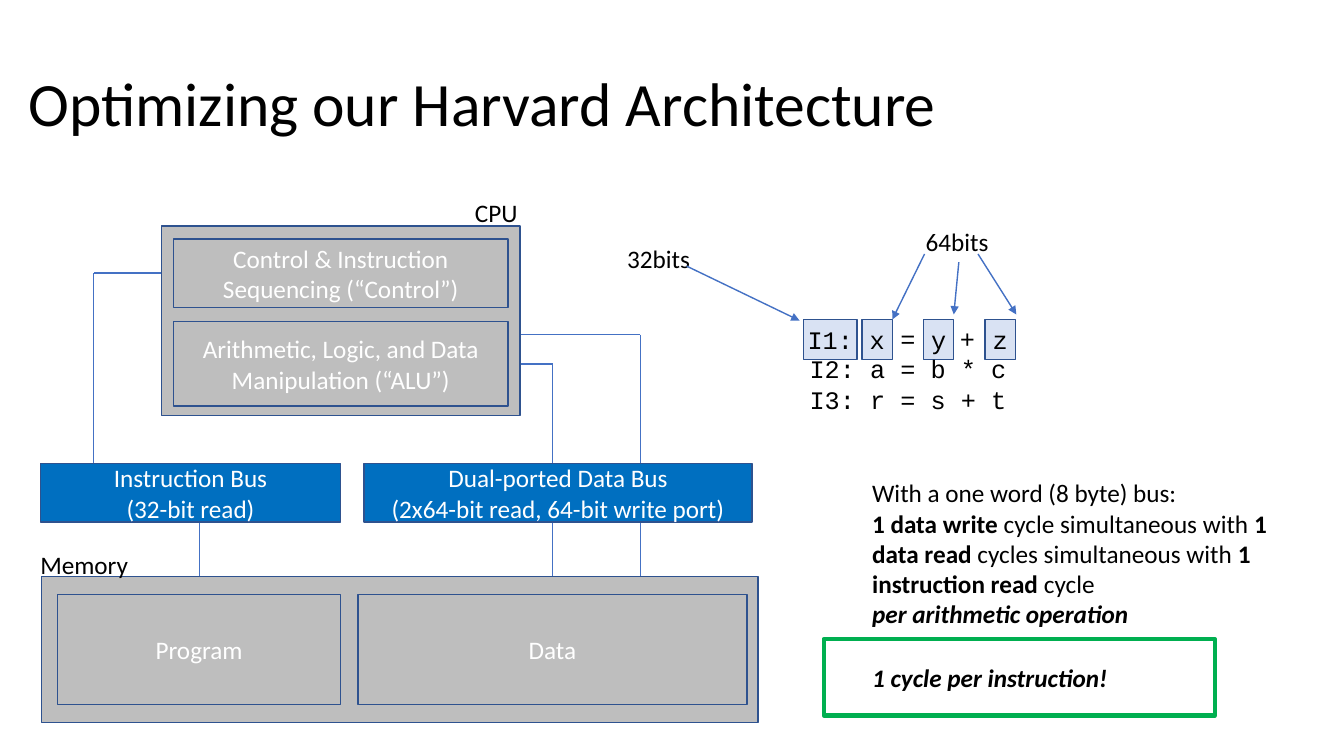
from lxml import etree
from pptx import Presentation
from pptx.dml.color import RGBColor
from pptx.enum.shapes import MSO_CONNECTOR, MSO_SHAPE
from pptx.enum.text import MSO_ANCHOR, PP_ALIGN
from pptx.oxml.ns import qn
from pptx.util import Inches, Pt

BLACK = RGBColor(0x00, 0x00, 0x00)
WHITE = RGBColor(0xFF, 0xFF, 0xFF)
GRAY = RGBColor(0xBE, 0xBE, 0xBE)
BUS_BLUE = RGBColor(0x00, 0x6F, 0xC0)
OUTLINE_BLUE = RGBColor(0x2E, 0x52, 0x8F)
WIRE_BLUE = RGBColor(0x44, 0x71, 0xC4)
GREEN = RGBColor(0x00, 0xAF, 0x50)
RECTANGLE = MSO_SHAPE.RECTANGLE
STRAIGHT = MSO_CONNECTOR.STRAIGHT
LEFT, CENTER = PP_ALIGN.LEFT, PP_ALIGN.CENTER
TOP, MIDDLE = MSO_ANCHOR.TOP, MSO_ANCHOR.MIDDLE

BASE_FONT = {"name": "Calibri", "size": Pt(18), "bold": False, "italic": False}
CODE_FONT = {"name": "Courier New"}
BOLD = {"bold": True}
BOLD_ITALIC = {"bold": True, "italic": True}


def write(shape, paragraphs, color=BLACK, align=LEFT, anchor=TOP, wrap=True,
          left_margin=0, **font):
    """Each paragraph is a string or a list of (text, format) spans."""
    frame = shape.text_frame
    settings = {"margin_left": Inches(left_margin), "margin_right": 0,
                "margin_top": 0, "margin_bottom": 0,
                "vertical_anchor": anchor, "word_wrap": wrap}
    for name, value in settings.items():
        setattr(frame, name, value)
    for index, content in enumerate(paragraphs):
        para = frame.add_paragraph() if index else frame.paragraphs[0]
        para.alignment = align
        spans = [(content, {})] if isinstance(content, str) else content
        for text, extra in spans:
            span = para.add_run()
            span.text = text
            span.font.color.rgb = color
            for name, value in {**BASE_FONT, **font, **extra}.items():
                setattr(span.font, name, value)


def add_box(slide, place, fill=None, line=OUTLINE_BLUE, width=1, opacity=100):
    box = slide.shapes.add_shape(RECTANGLE, *map(Inches, place))
    box.shadow.inherit = False
    box.line.color.rgb = line
    box.line.width = Pt(width)
    if fill is None:
        box.fill.background()
        return box
    box.fill.solid()
    box.fill.fore_color.rgb = fill
    if opacity < 100:
        color = box.fill._xPr.find(qn("a:solidFill"))[0]
        etree.SubElement(color, qn("a:alpha"), val=str(opacity * 1000))
    return box


def add_block(slide, place, lines, fill=GRAY):
    write(add_box(slide, place, fill), lines, WHITE, CENTER, MIDDLE)


def add_label(slide, place, paragraphs, wrap=False, **font):
    write(slide.shapes.add_textbox(*map(Inches, place)), paragraphs, wrap=wrap, **font)


def add_line(slide, start, end, arrow=False):
    line = slide.shapes.add_connector(STRAIGHT, *map(Inches, start + end))
    line.line.color.rgb = WIRE_BLUE
    line.line.width = Pt(1)
    if arrow:
        etree.SubElement(line.line._get_or_add_ln(), qn("a:tailEnd"), type="triangle")
    etree.SubElement(line._element.spPr, qn("a:effectLst"))


def add_wire(slide, *points):
    for start, end in zip(points, points[1:]):
        add_line(slide, start, end)


def add_architecture(slide):
    # Wires run behind the blocks
    add_wire(slide, (1.7, 2.71), (0.93, 2.71), (0.93, 4.97))
    add_wire(slide, (1.98, 4.97), (1.98, 5.9))
    for x, y in ((5.48, 3.61), (6.35, 3.32)):
        add_wire(slide, (5.04, y), (x, y), (x, 5.9))

    # Memory
    add_box(slide, (0.41, 5.72, 7.11, 1.45), GRAY)
    add_block(slide, (0.57, 5.9, 2.81, 1.09), ["Program"])
    add_block(slide, (3.55, 5.9, 3.86, 1.09), ["Data"])
    add_label(slide, (0.4, 5.45, 0.9, 0.31), ["Memory"])

    # Buses
    add_block(slide, (0.4, 4.6, 2.98, 0.58),
              ["Instruction Bus", "(32-bit read)"], BUS_BLUE)
    add_block(slide, (3.61, 4.6, 3.85, 0.58),
              ["Dual-ported Data Bus", "(2x64-bit read, 64-bit write port)"], BUS_BLUE)

    # CPU
    add_box(slide, (1.6, 2.24, 3.56, 1.88), GRAY)
    add_block(slide, (1.72, 2.37, 3.32, 0.68),
              ["Control & Instruction", "Sequencing (“Control”)"])
    add_block(slide, (1.72, 3.19, 3.32, 0.84),
              ["Arithmetic, Logic, and Data", "Manipulation (“ALU”)"])
    add_label(slide, (4.71, 1.96, 0.45, 0.31), ["CPU"])


def add_instructions(slide):
    # First instruction, with its fields highlighted
    for left, width, text in ((7.97, 0.53, "I1:"), (8.55, 0.3, "x"),
                              (9.16, 0.3, "y"), (9.77, 0.3, "z")):
        field = add_box(slide, (left, 3.17, width, 0.4), WIRE_BLUE, opacity=20)
        write(field, [text], align=CENTER, anchor=MIDDLE, wrap=False, **CODE_FONT)
    for left, text in ((8.93, "="), (9.52, "+")):
        add_label(slide, (left, 3.21, 0.18, 0.31), [text], **CODE_FONT)
    add_label(slide, (8.03, 3.51, 1.97, 0.6),
              ["I2: a = b * c", "I3: r = s + t"], **CODE_FONT)

    # Field widths
    add_label(slide, (6.22, 2.41, 0.65, 0.31), ["32bits"])
    add_label(slide, (9.18, 2.24, 0.65, 0.31), ["64bits"])
    for start, end in (((6.81, 2.64), (7.93, 3.18)), ((9.17, 2.52), (8.85, 3.17)),
                       ((9.51, 2.6), (9.46, 3.12)), ((9.7, 2.52), (10.08, 3.12))):
        add_line(slide, start, end, arrow=True)


def add_conclusion(slide):
    add_label(slide, (8.65, 4.74, 3.97, 1.5), [
        "With a one word (8 byte) bus:",
        [("1 data write ", BOLD), ("cycle simultaneous with ", {}),
         ("1 data read ", BOLD), ("cycles simultaneous with ", {}),
         ("1 instruction read ", BOLD), ("cycle", {})],
        [("per arithmetic operation", BOLD_ITALIC)],
    ], wrap=True)
    result = add_box(slide, (8.17, 6.34, 3.88, 0.76), line=GREEN, width=3)
    write(result, ["1 cycle per instruction!"], anchor=MIDDLE, left_margin=0.48,
          **BOLD_ITALIC)


def main():
    deck = Presentation()
    deck.slide_width, deck.slide_height = Inches(13.33), Inches(7.5)
    slide = deck.slides.add_slide(deck.slide_layouts[5])

    # Title
    title = slide.shapes.title
    title.left, title.top, title.width, title.height = map(
        Inches, (0.28, 0.64, 12.57, 1.12))
    write(title, ["Optimizing our Harvard Architecture"], size=Pt(44))

    add_architecture(slide)
    add_instructions(slide)
    add_conclusion(slide)
    deck.save("out.pptx")


if __name__ == "__main__":
    main()
